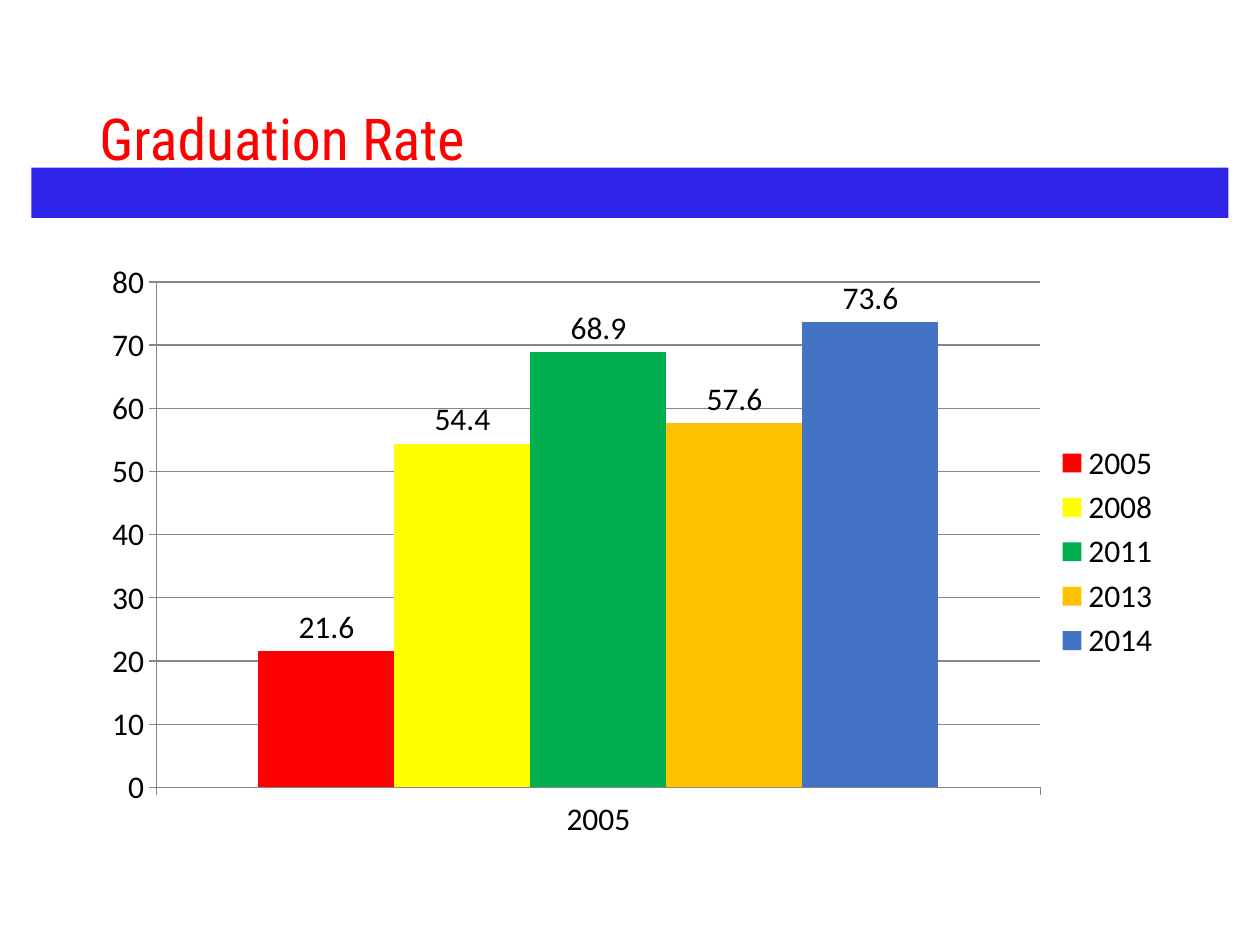
import pptx
import pptx.chart.data
import pptx.dml.color
import pptx.enum.chart
import pptx.enum.shapes
import pptx.enum.text
import pptx.oxml
import pptx.oxml.ns
import pptx.util

WIDTH, HEIGHT = 10, 7.5
MARGIN = 0.69
CONTENT_WIDTH = WIDTH - 2 * MARGIN
AXIS_GRAY = "868686"
RATES = [
    ("2005", 21.6, "FF0000"),
    ("2008", 54.4, "FFFF00"),
    ("2011", 68.9, "00B050"),
    ("2013", 57.6, "FFC000"),
    ("2014", 73.6, "4472C4"),
]


def rgb(value):
    return pptx.dml.color.RGBColor.from_string(value)


def box(*lengths):
    return [pptx.util.Inches(n) for n in lengths]


def style_font(font, name, size, color):
    font.name = name
    font.size = pptx.util.Pt(size)
    font.color.rgb = rgb(color)


def add_title(s, text, *place):
    tf = s.shapes.add_textbox(*box(*place)).text_frame
    tf.word_wrap = True
    tf.vertical_anchor = pptx.enum.text.MSO_ANCHOR.MIDDLE
    p = tf.paragraphs[0]
    p.line_spacing = 0.9
    r = p.add_run()
    r.text = text
    style_font(r.font, "Roboto Condensed", 33, "FF0000")


def add_band(s, color, *place):
    sp = s.shapes.add_shape(pptx.enum.shapes.MSO_SHAPE.RECTANGLE, *box(*place))
    sp.shadow.inherit = False
    sp.fill.solid()
    sp.fill.fore_color.rgb = rgb(color)
    sp.line.fill.background()


def place_plot(chart, x, y, w, h):
    """Fix the inner plot area, as shares of the chart's size."""
    plot_area = chart._chartSpace.chart.plotArea
    for old in plot_area.findall(pptx.oxml.ns.qn("c:layout")):
        plot_area.remove(old)
    values = [("layoutTarget", "inner"), ("xMode", "edge"), ("yMode", "edge"),
              ("x", x), ("y", y), ("w", w), ("h", h)]
    items = "".join(f'<c:{tag} val="{value}"/>' for tag, value in values)
    plot_area.insert(0, pptx.oxml.parse_xml(
        f'<c:layout {pptx.oxml.ns.nsdecls("c")}>'
        f"<c:manualLayout>{items}</c:manualLayout></c:layout>"))


def style_line(line):
    line.color.rgb = rgb(AXIS_GRAY)
    line.width = pptx.util.Pt(0.75)


def style_axes(chart):
    for axis in (chart.category_axis, chart.value_axis):
        axis.major_tick_mark = pptx.enum.chart.XL_TICK_MARK.OUTSIDE
        axis.minor_tick_mark = pptx.enum.chart.XL_TICK_MARK.NONE
        style_line(axis.format.line)
    axis = chart.value_axis
    axis.minimum_scale, axis.maximum_scale, axis.major_unit = 0, 80, 10
    axis.has_major_gridlines = True
    style_line(axis.major_gridlines.format.line)


def add_rate_chart(s, *place):
    data = pptx.chart.data.CategoryChartData()
    data.categories = ["2005"]
    for year, rate, _ in RATES:
        data.add_series(year, [rate])
    chart = s.shapes.add_chart(
        pptx.enum.chart.XL_CHART_TYPE.COLUMN_CLUSTERED, *box(*place), data).chart
    chart.has_title = False
    style_font(chart.font, "Calibri", 18, "000000")
    chart.has_legend = True
    chart.legend.position = pptx.enum.chart.XL_LEGEND_POSITION.RIGHT
    chart.legend.include_in_layout = False
    style_axes(chart)
    place_plot(chart, 0.064, 0.05, 0.814, 0.843)

    plot = chart.plots[0]
    plot.gap_width, plot.overlap, plot.vary_by_categories = 150, 0, False
    for series, (_, _, color) in zip(plot.series, RATES):
        series.format.fill.solid()
        series.format.fill.fore_color.rgb = rgb(color)
        labels = series.data_labels
        labels.show_value = True
        labels.position = pptx.enum.chart.XL_LABEL_POSITION.OUTSIDE_END


def main():
    prs = pptx.Presentation()
    prs.slide_width, prs.slide_height = box(WIDTH, HEIGHT)
    s = prs.slides.add_slide(prs.slide_layouts[6])
    add_title(s, "Graduation Rate", MARGIN, 0.4, CONTENT_WIDTH, 1.45)
    add_rate_chart(s, MARGIN, 2, CONTENT_WIDTH, 4.76)
    add_band(s, "2D24E8", 0.25, 1.33, WIDTH - 2 * 0.25, 0.4)
    prs.save("out.pptx")


if __name__ == "__main__":
    main()
